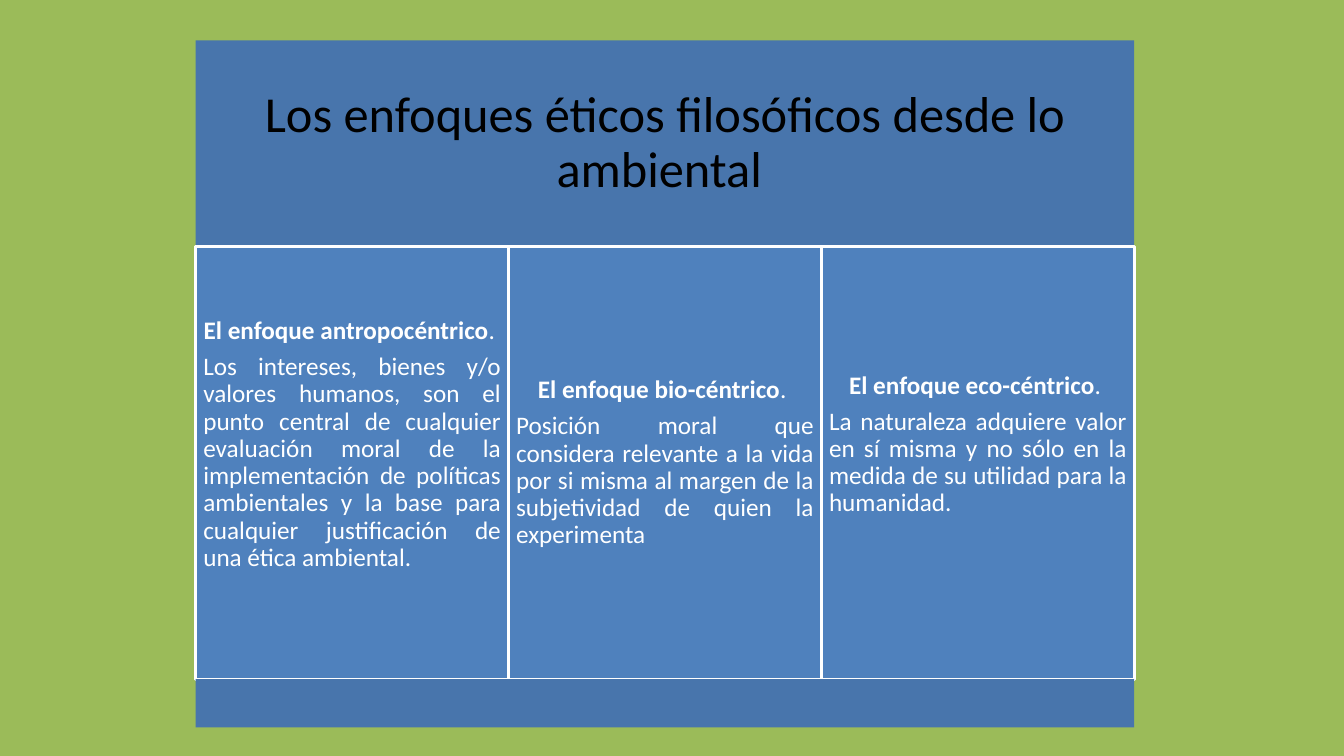
from pptx import Presentation
from pptx.dml.color import RGBColor
from pptx.enum import shapes, text
from pptx.util import Pt

COLORS = {"page": "9BBB59", "band": "4875AC", "panel": "4F81BD",
          "white": "FFFFFF", "black": "000000"}
APPROACHES = [
    ("El enfoque antropocéntrico",
     "Los intereses, bienes y/o valores humanos, son el punto central de "
     "cualquier evaluación moral de la implementación de políticas "
     "ambientales y la base para cualquier justificación de una ética "
     "ambiental. ", 26),
    ("El enfoque bio-céntrico",
     "Posición moral que considera relevante a la vida por si misma al "
     "margen de la subjetividad de quien la experimenta", 0),
    ("El enfoque eco-céntrico",
     "La naturaleza adquiere valor en sí misma y no sólo en la medida de su "
     "utilidad para la humanidad.", 26),
]


def paint(target, name):
    """Give a shape or background a solid fill."""
    target.fill.solid()
    target.fill.fore_color.rgb = RGBColor.from_string(COLORS[name])


def add_span(para, words, size=18, color="white", bold=False):
    """Append a formatted run to a paragraph."""
    span = para.add_run()
    span.text = words
    span.font.name = "Calibri"
    span.font.size = Pt(size)
    span.font.bold = bold
    span.font.color.rgb = RGBColor.from_string(COLORS[color])


def set_frame(frame, inset, extra_bottom=0):
    """Wrap text, centre it vertically and set its margins."""
    frame.word_wrap = True
    frame.auto_size = text.MSO_AUTO_SIZE.NONE
    frame.vertical_anchor = text.MSO_ANCHOR.MIDDLE
    frame.margin_left = frame.margin_right = frame.margin_top = Pt(inset)
    frame.margin_bottom = Pt(inset + extra_bottom)


def set_para(para, align, after=0):
    """Set the alignment and spacing of a paragraph."""
    para.alignment = align
    para.line_spacing = 0.9
    para.space_before = Pt(0)
    para.space_after = Pt(after)


def add_box(page, box, fill):
    """Add a plain filled rectangle without outline."""
    shape = page.shapes.add_shape(
        shapes.MSO_SHAPE.RECTANGLE, *(Pt(length) for length in box))
    shape.shadow.inherit = False
    paint(shape, fill)
    shape.line.fill.background()
    return shape


def add_header(page, box):
    """Place the title on its coloured band."""
    title = page.shapes.title
    title.left, title.top, title.width, title.height = map(Pt, box)
    paint(title, "band")
    set_frame(title.text_frame, 10.8)
    para = title.text_frame.paragraphs[0]
    set_para(para, text.PP_ALIGN.CENTER)
    add_span(para, "Los enfoques éticos filosóficos desde lo ambiental ",
             size=36, color="black")


def add_panel(page, box, heading, body, extra_bottom):
    """Add one outlined panel with a heading and a justified body."""
    panel = add_box(page, box, "panel")
    panel.line.color.rgb = RGBColor.from_string(COLORS["white"])
    panel.line.width = Pt(2)
    frame = panel.text_frame
    set_frame(frame, 5.4, extra_bottom)
    para = frame.paragraphs[0]
    set_para(para, text.PP_ALIGN.CENTER, after=6.3)
    add_span(para, heading, bold=True)
    add_span(para, ". ")
    para = frame.add_paragraph()
    set_para(para, text.PP_ALIGN.JUSTIFY)
    add_span(para, body)


def add_panels(page, box):
    """Divide the box into equal columns, one per approach."""
    left, top, width, height = box
    column = width / len(APPROACHES)
    for index, approach in enumerate(APPROACHES):
        add_panel(page, (left + index * column, top, column, height), *approach)


def main():
    """Build and save the deck."""
    deck = Presentation()
    deck.slide_width, deck.slide_height = Pt(960), Pt(540)
    page = deck.slides.add_slide(deck.slide_layouts[5])
    paint(page.background, "page")
    left, width = 139.8, 670.4
    add_header(page, (left, 28.9, width, 147.4))
    add_panels(page, (left, 176.3, width, 308.9))
    add_box(page, (left, 485.2, width, 34.4), "band")
    deck.save("out.pptx")


if __name__ == "__main__":
    main()
